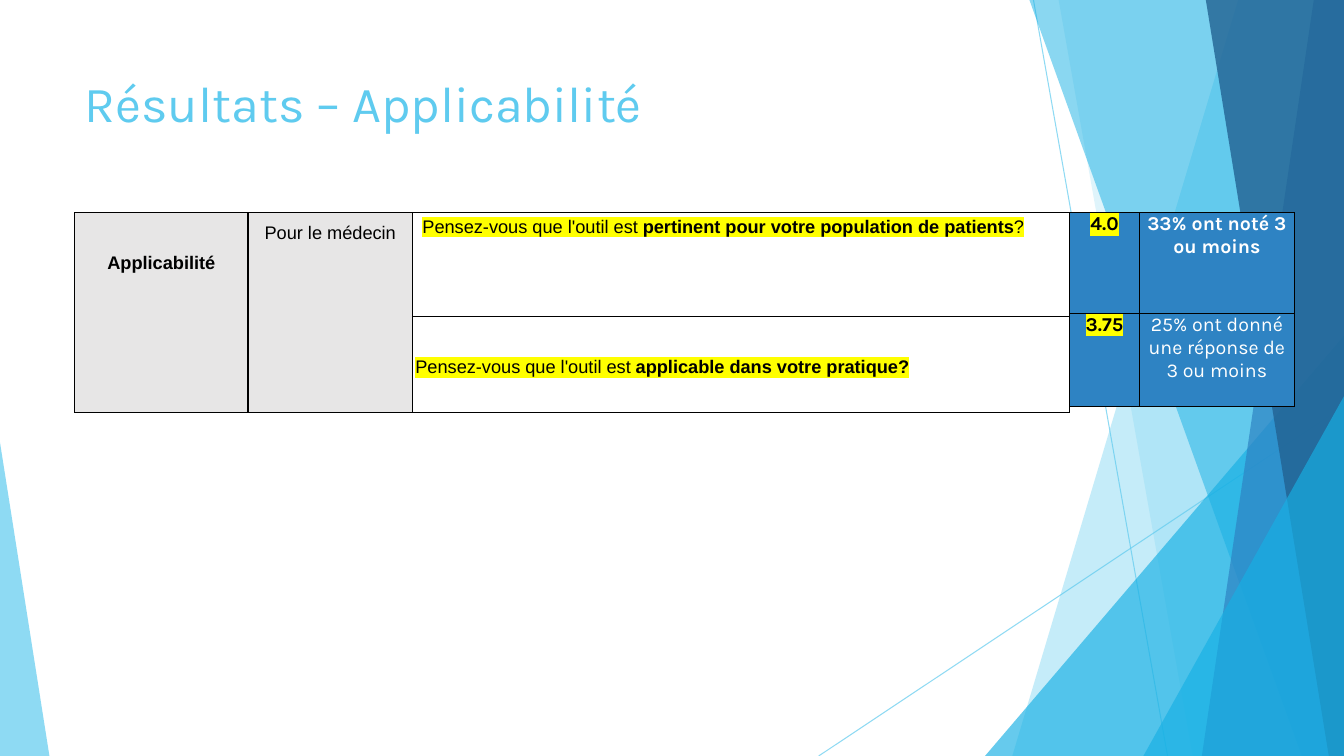
import pptx
import pptx.util
import pptx.dml.color
import pptx.enum.shapes
import pptx.enum.text
import pptx.oxml
import pptx.oxml.ns

Inches = pptx.util.Inches
Pt = pptx.util.Pt
qn = pptx.oxml.ns.qn
ALIGN = pptx.enum.text.PP_ALIGN
ANCHOR = pptx.enum.text.MSO_ANCHOR
KIND = pptx.enum.shapes.MSO_SHAPE
WIDE, HIGH = 13.33, 7.5
SKY, CYAN, BLUE, NAVY = "5FCBEF", "17B0E4", "2E83C3", "226292"
GREY, BLACK, WHITE, YELLOW = "E7E6E6", "000000", "FFFFFF", "FFFF00"


def tint(code):
    return pptx.dml.color.RGBColor.from_string(code)


def put(item, vals):
    for name, val in vals.items():
        setattr(item, name, val)


def node(text):
    return pptx.oxml.parse_xml(text.replace(">", f" {pptx.oxml.ns.nsdecls('a')}>", 1))


def fade(item, code, alpha):
    item.solid()
    item.fore_color.rgb = tint(code)
    mark = item.fore_color._xFill.find(qn("a:srgbClr"))
    mark.append(node(f'<a:alpha val="{alpha * 1000}"></a:alpha>'))


def paint(shape, code, alpha):
    shape.shadow.inherit = False
    shape.line.fill.background()
    fade(shape.fill, code, alpha)


def ray(slide, *ends):
    line = slide.shapes.add_connector(
        pptx.enum.shapes.MSO_CONNECTOR.STRAIGHT, *map(Inches, ends))
    line.line.width = Pt(0.75)
    fade(line.line.fill, SKY, 70)
    line._element.spPr.append(node("<a:effectLst></a:effectLst>"))


def band(slide, top, base, code, alpha):
    pen = slide.shapes.build_freeform(Inches(top), 0)
    spots = [(WIDE, 0), (WIDE, HIGH), (base, HIGH)]
    pen.add_line_segments([(Inches(x), Inches(y)) for x, y in spots])
    paint(pen.convert_to_shape(), code, alpha)


def wedge(slide, left, top, wide, tip, code, alpha):
    box = map(Inches, (left, top, wide, HIGH - top))
    shape = slide.shapes.add_shape(KIND.ISOSCELES_TRIANGLE, *box)
    shape.adjustments[0] = tip
    paint(shape, code, alpha)


def decor(slide):
    ray(slide, 10.25, 0, 11.58, HIGH)
    ray(slide, WIDE, 4.03, 8.12, HIGH)
    band(slide, 12.28, 10.04, SKY, 36)
    band(slide, 10.5, 11.83, SKY, 20)
    wedge(slide, 9.77, 3.33, 3.56, 1, CYAN, 66)
    band(slide, 10.21, 12.91, CYAN, 50)
    band(slide, 13.03, 11.92, BLUE, 70)
    band(slide, 11.96, 13.18, NAVY, 80)
    wedge(slide, 11.34, 3.93, 1.99, 1, CYAN, 66)
    wedge(slide, 0, 4.39, 0.49, 0, SKY, 70)


def write(para, text, size, face, code=BLACK, bold=False, glow=None):
    run = para.add_run()
    run.text = text
    put(run.font, {"size": Pt(size), "name": face, "bold": bold})
    run.font.color.rgb = tint(code)
    if glow:
        fill = run.font._element.find(qn("a:solidFill"))
        fill.addnext(node(
            f'<a:highlight><a:srgbClr val="{glow}"/></a:highlight>'))


def frame(cell):
    props = cell._tc.get_or_add_tcPr()
    for spot, side in enumerate("LRTB"):
        props.insert(spot, node(
            f'<a:ln{side} w="12700"><a:solidFill><a:srgbClr val="{BLACK}"/>'
            f'</a:solidFill></a:ln{side}>'))


def grid(slide, left, top, cols, rows):
    box = map(Inches, (left, top, sum(cols), sum(rows)))
    table = slide.shapes.add_table(len(rows), len(cols), *box).table
    put(table, {"first_row": False, "horz_banding": False})
    for col, wide in zip(table.columns, cols):
        col.width = Inches(wide)
    for row, high in zip(table.rows, rows):
        row.height = Inches(high)
    for cell in table.iter_cells():
        cell.fill.background()
        frame(cell)
    return table


def pad(cell, sides, fill=None, anchor=ANCHOR.TOP):
    names = ("margin_left", "margin_top", "margin_right", "margin_bottom")
    put(cell, dict(zip(names, map(Inches, sides))))
    cell.vertical_anchor = anchor
    if fill:
        cell.fill.solid()
        cell.fill.fore_color.rgb = tint(fill)


def fill_in(cell, runs, align, space, **look):
    para = cell.text_frame.paragraphs[0]
    put(para, {"alignment": align, "line_spacing": space})
    for text, bold in runs:
        write(para, text, bold=bold, **look)


def ask(slide):
    table = grid(slide, 0.74, 2.11, (1.72, 1.63, 6.52), (1.03, 0.95))
    look = {"size": 13, "face": "Arial"}
    heads = (("Applicabilité", True, (0.26, 0.37, 0.26, 0.13)),
             ("Pour le médecin", False, (0.13, 0.07, 0.13, 0.07)))
    for col, (text, bold, sides) in enumerate(heads):
        cell = table.cell(0, col)
        cell.merge(table.cell(1, col))
        pad(cell, sides, GREY)
        fill_in(cell, [(text, bold)], ALIGN.CENTER, 1.15, **look)
    start = ("Pensez-vous que l'outil est ", False)
    asks = (
        ([start, ("pertinent pour votre population de patients", True),
          ("?", False)], (0.1, 0.01, 0.1, 0), ANCHOR.TOP),
        ([start, ("applicable dans votre pratique?", True)],
         (0.03, 0.03, 0.03, 0), ANCHOR.MIDDLE))
    for row, (runs, sides, anchor) in enumerate(asks):
        cell = table.cell(row, 2)
        pad(cell, sides, anchor=anchor)
        fill_in(cell, runs, ALIGN.LEFT, 1.15, glow=YELLOW, **look)


def score(slide):
    table = grid(slide, 10.61, 2.11, (0.69, 1.54), (1, 0.92))
    marks = (("4.0", "33% ont noté 3 ou moins", True),
             ("3.75", "25% ont donné une réponse de 3 ou moins", False))
    for row, (mark, note, bold) in enumerate(marks):
        pair = ((mark, True, BLACK, YELLOW), (note, bold, WHITE, None))
        for col, (text, thick, code, glow) in enumerate(pair):
            cell = table.cell(row, col)
            pad(cell, (0.05, 0, 0.05, 0), BLUE)
            fill_in(cell, [(text, thick)], ALIGN.CENTER, 1.0,
                    size=14, face="Karla", code=code, glow=glow)


def head(slide, text):
    title = slide.shapes.title
    names = ("left", "top", "width", "height")
    put(title, dict(zip(names, map(Inches, (0.74, 0.67, 9.4, 1.44)))))
    put(title.text_frame, {"vertical_anchor": ANCHOR.TOP, "word_wrap": True})
    para = title.text_frame.paragraphs[0]
    para.alignment = ALIGN.LEFT
    write(para, text, 36, "Karla", SKY)


def main():
    deck = pptx.Presentation()
    put(deck, {"slide_width": Inches(WIDE), "slide_height": Inches(HIGH)})
    slide = deck.slides.add_slide(deck.slide_layouts.get_by_name("Title Only"))
    decor(slide)
    head(slide, "Résultats – Applicabilité")
    ask(slide)
    score(slide)
    deck.save("out.pptx")


if __name__ == "__main__":
    main()
